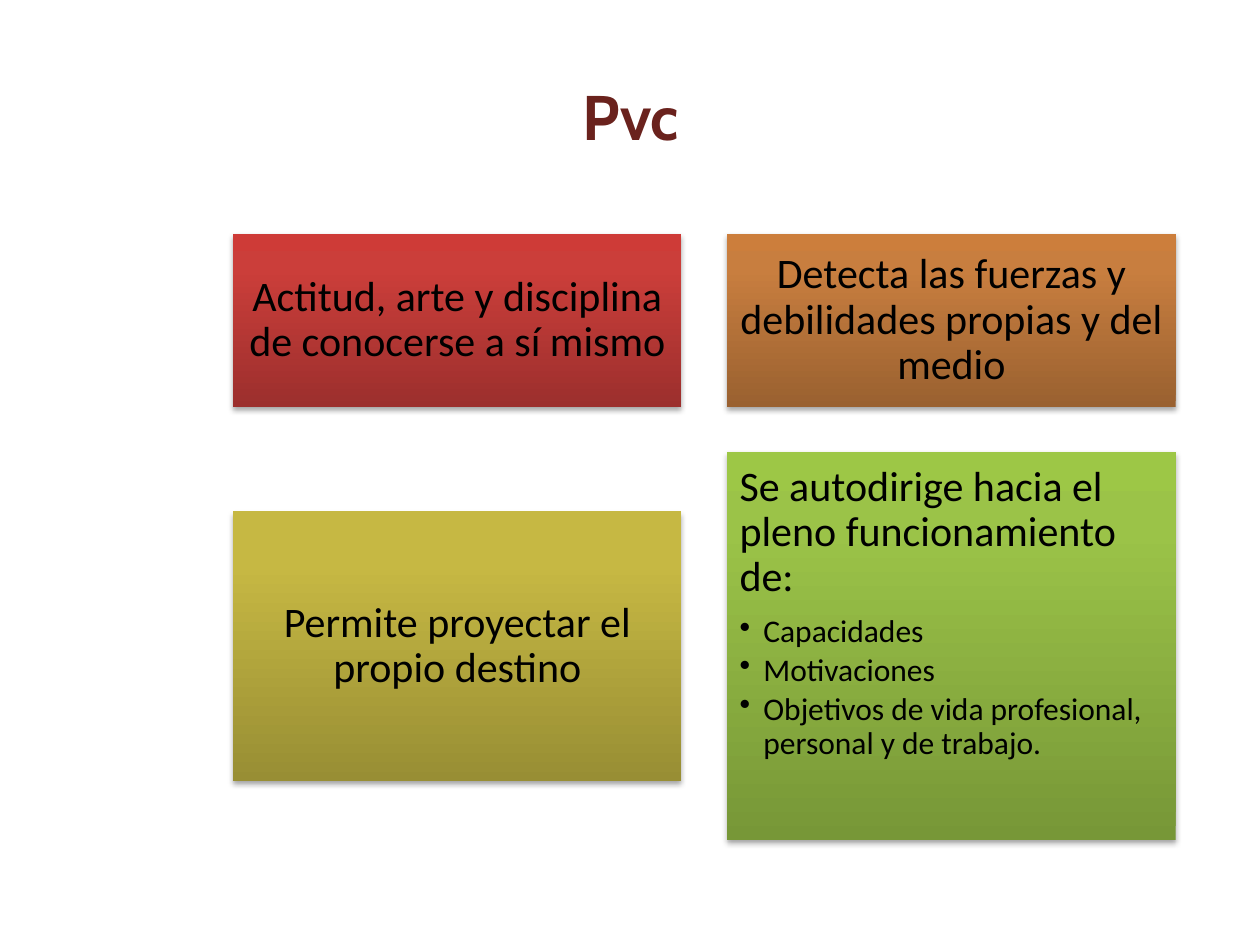
from lxml import etree
from pptx import Presentation
from pptx.dml.color import RGBColor
from pptx.enum.shapes import MSO_SHAPE as SHAPE
from pptx.enum.text import MSO_ANCHOR as ANCHOR, PP_ALIGN as ALIGN
from pptx.oxml import parse_xml
from pptx.oxml.ns import nsdecls, qn
from pptx.util import Cm, Pt

COLORS = {"title": "6A221D", "text": "000000"}
# Gradient stops at 0, 80 and 100 %, from bottom to top
GRADIENTS = {
    "red": ("9C2F2D", "CB3E3A", "CE3B37"),
    "orange": ("9A6130", "C87E3F", "CC7E3C"),
    "yellow": ("988E34", "C6B843", "C9BB41"),
    "green": ("779737", "9BC348", "9DC746"),
}
TITLE = {"size": Pt(36), "name": "Cabin", "bold": True}
LEAD = {"size": Pt(24), "name": "Calibri"}
ITEM = {"size": Pt(18), "name": "Calibri"}
INSET = Cm(0.25)
GAP = 0.92


def set_format(target, values):
    for key, value in values.items():
        setattr(target, key, value)


def add_run(p, text, font, color):
    r = p.add_run()
    r.text = text
    set_format(r.font, font)
    r.font.color.rgb = RGBColor.from_string(COLORS[color])


def set_frame(tf, inset, anchor):
    set_format(tf, {"word_wrap": True, "vertical_anchor": anchor})
    set_format(tf, {f"margin_{side}": inset
                    for side in ("left", "right", "top", "bottom")})


def add_title(slide, text, x, y, w, h):
    tf = slide.shapes.add_textbox(Cm(x), Cm(y), Cm(w), Cm(h)).text_frame
    set_frame(tf, Cm(0.13), ANCHOR.MIDDLE)
    p = tf.paragraphs[0]
    p.alignment = ALIGN.CENTER
    add_run(p, text, TITLE, "title")


def style_card(sp, gradient):
    """Give the card its three-stop gradient and its soft shadow below."""
    sp.line.fill.background()
    sp.shadow.inherit = False
    stops = "".join(
        f'<a:gs pos="{pos}"><a:srgbClr val="{color}"/></a:gs>'
        for pos, color in zip((0, 80000, 100000), GRADIENTS[gradient]))
    props = sp.element.spPr
    props.find(qn("a:ln")).addprevious(parse_xml(
        f'<a:gradFill {nsdecls("a")} rotWithShape="1"><a:gsLst>{stops}</a:gsLst>'
        '<a:lin ang="16200000" scaled="0"/></a:gradFill>'))
    props.find(qn("a:effectLst")).append(parse_xml(
        f'<a:outerShdw {nsdecls("a")} blurRad="40000" dist="23000" dir="5400000"'
        ' rotWithShape="0"><a:srgbClr val="000000"><a:alpha val="35000"/>'
        '</a:srgbClr></a:outerShdw>'))


def add_bullet(p):
    props = p._p.get_or_add_pPr()
    props.set("marL", str(Cm(0.48)))
    props.set("indent", str(-Cm(0.48)))
    etree.SubElement(props, qn("a:buChar")).set("char", "•")


def add_card(slide, gradient, lead, items, x, y, w, h):
    sp = slide.shapes.add_shape(SHAPE.RECTANGLE, Cm(x), Cm(y), Cm(w), Cm(h))
    style_card(sp, gradient)
    tf = sp.text_frame
    set_frame(tf, INSET, ANCHOR.TOP if items else ANCHOR.MIDDLE)
    p = tf.paragraphs[0]
    set_format(p, {"alignment": ALIGN.LEFT if items else ALIGN.CENTER,
                   "line_spacing": 0.9, "space_after": Pt(8.4)})
    add_run(p, lead, LEAD, "text")
    for item in items:
        p = tf.add_paragraph()
        add_bullet(p)
        set_format(p, {"alignment": ALIGN.LEFT, "line_spacing": 0.9,
                       "space_after": Pt(2.7)})
        add_run(p, item, ITEM, "text")


def add_card_grid(slide, rows, x, y, w):
    """Place two cards a row; a shorter card is centred in its row."""
    card_w = (w - GAP) / 2
    for row in rows:
        row_h = max(h for *_, h in row)
        for col, (gradient, lead, items, h) in enumerate(row):
            add_card(slide, gradient, lead, items, x + col * (card_w + GAP),
                     y + (row_h - h) / 2, card_w, h)
        y += row_h + GAP


def main():
    prs = Presentation()
    prs.slide_width, prs.slide_height = Cm(25.4), Cm(19.05)
    slide = prs.slides.add_slide(prs.slide_layouts[6])
    add_title(slide, "Pvc ", 4.01, 1.37, 17.7, 1.9)
    rows = [
        [("red", "Actitud, arte y disciplina de conocerse a sí mismo", [], 3.48),
         ("orange", "Detecta las fuerzas y debilidades propias y del medio", [], 3.48)],
        [("yellow", "Permite proyectar el propio destino", [], 5.44),
         ("green", "Se autodirige hacia el pleno funcionamiento de:",
          ["Capacidades", "Motivaciones",
           "Objetivos de vida profesional, personal y de trabajo."], 7.82)],
    ]
    add_card_grid(slide, rows, 4.7, 4.72, 19)
    prs.save("out.pptx")


if __name__ == "__main__":
    main()
